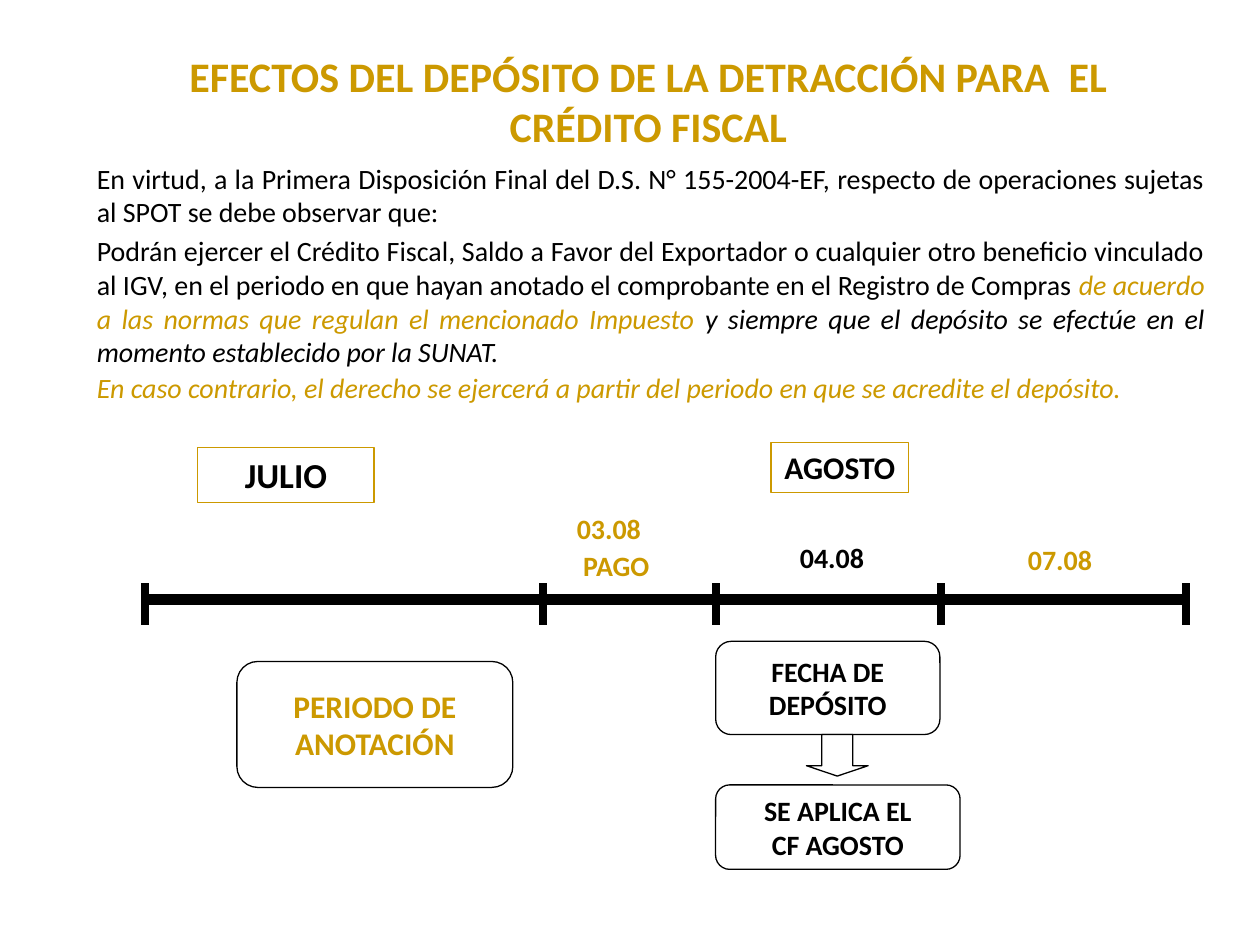
from lxml.etree import SubElement
from pptx import Presentation
from pptx.dml.color import RGBColor
from pptx.enum.shapes import MSO_CONNECTOR, MSO_SHAPE
from pptx.enum.text import MSO_ANCHOR, PP_ALIGN
from pptx.oxml.ns import qn
from pptx.util import Inches, Pt

GOLD = RGBColor(0xCC, 0x99, 0x00)
BLACK = RGBColor(0, 0, 0)
WHITE = RGBColor(0xFF, 0xFF, 0xFF)
FONT = "Calibri"

TITLE = "EFECTOS DEL DEPÓSITO DE LA DETRACCIÓN PARA  EL CRÉDITO FISCAL"

# Body paragraphs: runs of (text, colour, italic)
BODY = [
    [("En virtud, a la Primera Disposición Final del D.S. N° 155-2004-EF, respecto de "
      "operaciones sujetas al SPOT se debe observar que:", BLACK, False)],
    [("Podrán ejercer el Crédito Fiscal, Saldo a Favor del Exportador o cualquier otro "
      "beneficio vinculado al IGV, en el periodo en que hayan anotado el comprobante en "
      "el Registro de Compras ", BLACK, False),
     ("de acuerdo a las normas que regulan el mencionado Impuesto ", GOLD, True),
     ("y siempre que el depósito se efectúe en el momento establecido por la SUNAT.",
      BLACK, True)],
    [("En caso contrario, el derecho se ejercerá a partir del periodo en que se acredite "
      "el depósito.", GOLD, True)],
]

# Timeline
AXIS_Y, TICK_TOP, TICK_BOTTOM = 4.76, 4.63, 4.96
TICKS = [1.15, 4.31, 5.68, 7.47, 9.41]

# (lines, (left, top, width, height), size, colour, wrap)
DATES = [
    (["03.08", " PAGO"], (4.48, 4.08, 1, 0.61), 16, GOLD, True),
    (["04.08"], (6.25, 4.24, 0.72, 0.37), 16, BLACK, False),
    (["07.08"], (8.06, 4.26, 0.72, 0.37), 16, GOLD, False),
]
MONTHS = [
    (["JULIO"], (1.57, 3.55, 1.4, 0.44), 20, BLACK, True),
    (["AGOSTO"], (6.12, 3.51, 1.09, 0.4), 18, BLACK, False),
]
STEPS = [
    (["PERIODO DE", "ANOTACIÓN"], (1.88, 5.25, 2.19, 1), 18, GOLD, False),
    (["FECHA DE DEPÓSITO"], (5.68, 5.09, 1.78, 0.74), 16, BLACK, True),
    (["SE APLICA EL", "CF AGOSTO"], (5.68, 6.23, 1.94, 0.67), 16, BLACK, False),
]
ARROW = (6.4, 5.83, 0.49, 0.33)

presentation = Presentation()
presentation.slide_width, presentation.slide_height = Inches(10), Inches(7.5)
slide = presentation.slides.add_slide(presentation.slide_layouts[6])


def add_text_box(box, wrap=True):
    text_box = slide.shapes.add_textbox(*map(Inches, box))
    text_box.text_frame.word_wrap = wrap
    return text_box


def add_outlined_shape(kind, box, line_color):
    shape = slide.shapes.add_shape(kind, *map(Inches, box))
    shape.shadow.inherit = False
    shape.fill.solid()
    shape.fill.fore_color.rgb = WHITE
    shape.line.color.rgb = line_color
    shape.line.width = Pt(0.75)
    return shape


def write_lines(shape, lines, size, color, wrap, align, anchor=MSO_ANCHOR.TOP):
    frame = shape.text_frame
    frame.text = "\n".join(lines)
    frame.word_wrap = wrap
    frame.vertical_anchor = anchor
    for paragraph in frame.paragraphs:
        paragraph.alignment = align
        paragraph.font.name = FONT
        paragraph.font.size = Pt(size)
        paragraph.font.bold = True
        paragraph.font.color.rgb = color


def add_line(start, end, width):
    line = slide.shapes.add_connector(MSO_CONNECTOR.STRAIGHT, *map(Inches, start + end))
    line.line.color.rgb = BLACK
    line.line.width = Pt(width)
    SubElement(line._element.spPr, qn("a:effectLst"))


# Title
title = add_text_box((0.67, 0.29, 8.74, 0.94))
write_lines(title, [TITLE], 24, GOLD, True, PP_ALIGN.CENTER)
title.text_frame.margin_left = Inches(0.31)
title.text_frame.margin_top = Inches(0.11)

# Body text
body = add_text_box((0.67, 1.23, 8.99, 2.05)).text_frame
for index, runs in enumerate(BODY):
    paragraph = body.add_paragraph() if index else body.paragraphs[0]
    paragraph.alignment = PP_ALIGN.JUSTIFY
    paragraph.font.name = FONT
    paragraph.font.size = Pt(16)
    if index:
        paragraph.space_before = Pt(3.2)
    for text, color, italic in runs:
        run = paragraph.add_run()
        run.text = text
        run.font.color.rgb = color
        run.font.italic = italic
paragraph.line_spacing = 0.9

# Timeline axis and ticks
add_line((TICKS[0], AXIS_Y), (TICKS[-1], AXIS_Y), 6)
for x in TICKS:
    add_line((x, TICK_TOP), (x, TICK_BOTTOM), 4.5)

# Month labels
for lines, box, size, color, wrap in MONTHS:
    shape = add_outlined_shape(MSO_SHAPE.RECTANGLE, box, GOLD)
    write_lines(shape, lines, size, color, wrap, PP_ALIGN.CENTER)

# Dates above the axis
for lines, box, size, color, wrap in DATES:
    text_box = add_text_box(box, wrap)
    write_lines(text_box, lines, size, color, wrap, PP_ALIGN.LEFT)
    if len(lines) > 1:
        for paragraph in text_box.text_frame.paragraphs:
            paragraph.line_spacing = 0.7
        paragraph.space_before = Pt(8)

# Steps below the axis
for lines, box, size, color, wrap in STEPS:
    shape = add_outlined_shape(MSO_SHAPE.ROUNDED_RECTANGLE, box, BLACK)
    write_lines(shape, lines, size, color, wrap, PP_ALIGN.CENTER, MSO_ANCHOR.MIDDLE)

# Arrow from deposit to credit
arrow = add_outlined_shape(MSO_SHAPE.DOWN_ARROW, ARROW, BLACK)
arrow.adjustments[0], arrow.adjustments[1] = 0.5, 0.25

presentation.save("out.pptx")
